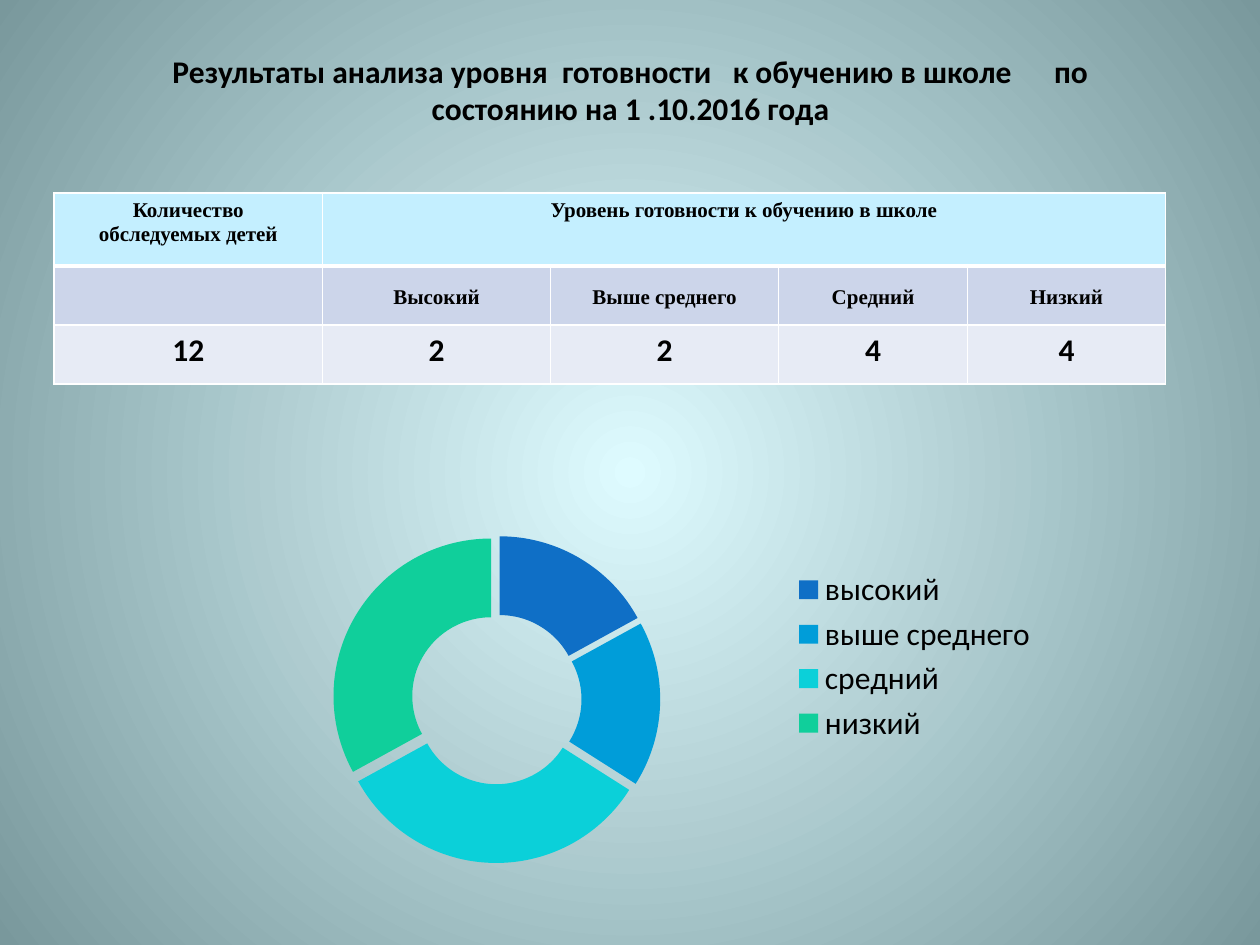
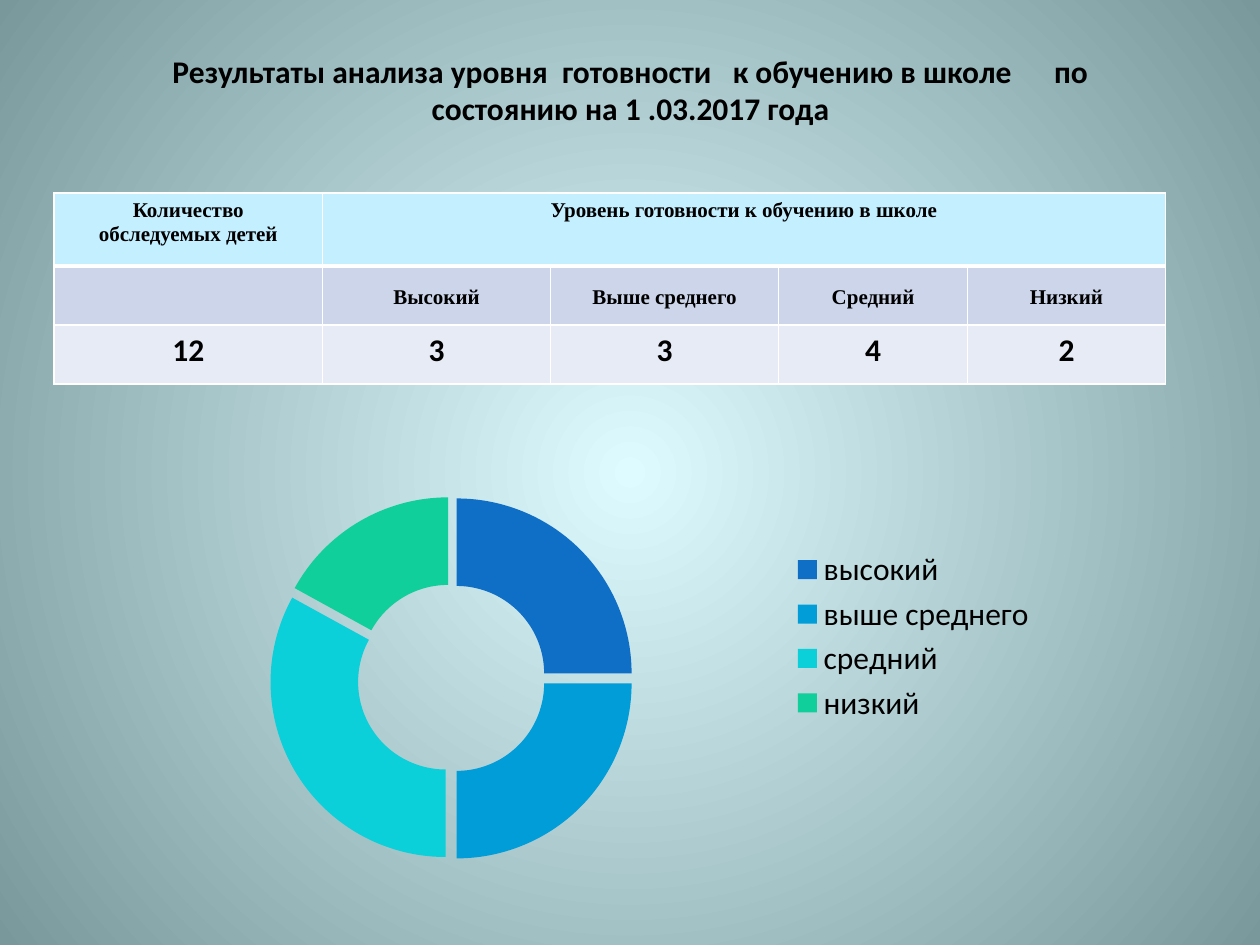
from dataclasses import dataclass

from lxml import etree
from pptx import Presentation
from pptx.chart.data import CategoryChartData
from pptx.dml.color import RGBColor
from pptx.enum.chart import XL_CHART_TYPE, XL_LEGEND_POSITION
from pptx.enum.text import MSO_ANCHOR, PP_ALIGN
from pptx.oxml.ns import qn
from pptx.util import Inches, Pt

CENTER = PP_ALIGN.CENTER
TOP, MIDDLE = MSO_ANCHOR.TOP, MSO_ANCHOR.MIDDLE
DOUGHNUT = XL_CHART_TYPE.DOUGHNUT
LEGEND_RIGHT = XL_LEGEND_POSITION.RIGHT


@dataclass(frozen=True)
class Theme:
    glow: str = "DEFBFF"
    edge: str = "79989C"
    text: str = "000000"
    border: str = "FFFFFF"
    row_fills: tuple = ("C4EFFF", "CCD5EA", "E7EBF5")
    slices: tuple = ("0F6FC6", "009DD9", "0BD0D9", "10CF9B")
    body_font: str = "Calibri"
    header_font: str = "Times New Roman"
    body_size: int = 18
    header_size: int = 12


@dataclass(frozen=True)
class Box:
    left: float
    top: float
    width: float
    height: float

    def lengths(self) -> tuple:
        return tuple(Inches(n) for n in (self.left, self.top, self.width, self.height))


@dataclass(frozen=True)
class Survey:
    date: str
    counts: tuple
    shares: tuple
    chart: Box
    ring: Box


THEME = Theme()
TITLE_BOX = Box(0.83, 0.36, 8.35, 0.71)
TABLE_BOX = Box(0.43, 1.53, 8.82, 1.52)
COLUMN_WIDTHS = (2.13, 1.81, 1.81, 1.5, 1.57)
ROW_HEIGHTS = (0.58, 0.47, 0.47)
LEVELS = ("Высокий", "Выше среднего", "Средний", "Низкий")
EXPLOSION = 8

SURVEYS = (
    Survey("1 .10.2016", (12, 2, 2, 4, 4), (17, 17, 33, 33),
           Box(1.67, 3.44, 6.67, 3.54), Box(2.64, 4.25, 2.6, 2.6)),
    Survey("1 .03.2017", (12, 3, 3, 4, 2), (25, 25, 33, 17),
           Box(0.98, 3.12, 7.35, 3.86), Box(2.14, 3.94, 2.89, 2.89)),
)


def color(value: str) -> RGBColor:
    return RGBColor.from_string(value)


def style_font(font, name: str, size: int, bold: bool = True) -> None:
    font.name, font.size, font.bold = name, Pt(size), bold
    font.color.rgb = color(THEME.text)


def draw_background(slide) -> None:
    """Radial gradient, light in the centre."""
    fill = slide.background.fill
    fill.gradient()
    for stop, value in zip(fill.gradient_stops, (THEME.glow, THEME.edge)):
        stop.color.rgb = color(value)
    gradient = slide.element.find(".//" + qn("a:gradFill"))
    linear = gradient.find(qn("a:lin"))
    if linear is not None:
        gradient.remove(linear)
    circle = etree.SubElement(gradient, qn("a:path"))
    circle.set("path", "circle")
    center = etree.SubElement(circle, qn("a:fillToRect"))
    for side in "ltrb":
        center.set(side, "50000")


def draw_title(slide, date: str) -> None:
    frame = slide.shapes.add_textbox(*TITLE_BOX.lengths()).text_frame
    frame.word_wrap = True
    paragraph = frame.paragraphs[0]
    paragraph.text = ("Результаты анализа уровня  готовности   к обучению в школе      "
                      f"по состоянию на {date} года")
    paragraph.alignment = CENTER
    style_font(paragraph.font, THEME.body_font, THEME.body_size)


def set_borders(cell, row: int) -> None:
    """White rules, with a heavy one under the header row."""
    widths = {"L": 1, "R": 1, "T": 3 if row == 1 else 1, "B": 3 if row == 0 else 1}
    properties = cell._tc.get_or_add_tcPr()
    for side, width in widths.items():
        line = etree.SubElement(properties, qn(f"a:ln{side}"), w=str(Pt(width)))
        fill = etree.SubElement(line, qn("a:solidFill"))
        etree.SubElement(fill, qn("a:srgbClr"), val=THEME.border)


def style_cell(cell, row: int) -> None:
    set_borders(cell, row)
    cell.fill.solid()
    cell.fill.fore_color.rgb = color(THEME.row_fills[row])
    is_level = row == 1
    cell.vertical_anchor = MIDDLE if is_level else TOP
    if is_level:
        cell.margin_left = cell.margin_right = Inches(0.01)
        cell.margin_top = cell.margin_bottom = Inches(0.01)
    is_count = row == 2
    for paragraph in cell.text_frame.paragraphs:
        paragraph.alignment = CENTER
        if is_level:
            paragraph.line_spacing = 1.15
        style_font(paragraph.font,
                   THEME.body_font if is_count else THEME.header_font,
                   THEME.body_size if is_count else THEME.header_size)


def draw_table(slide, counts: tuple) -> None:
    rows = (
        ("Количество\nобследуемых детей", "Уровень готовности к обучению в школе", "", "", ""),
        ("", *LEVELS),
        tuple(str(count) for count in counts),
    )
    table = slide.shapes.add_table(len(rows), len(COLUMN_WIDTHS), *TABLE_BOX.lengths()).table
    table.first_row = table.horz_banding = False
    for column, width in zip(table.columns, COLUMN_WIDTHS):
        column.width = Inches(width)
    for table_row, height in zip(table.rows, ROW_HEIGHTS):
        table_row.height = Inches(height)
    for row, texts in enumerate(rows):
        for column, text in enumerate(texts):
            cell = table.cell(row, column)
            cell.text = text
            style_cell(cell, row)
    table.cell(0, 1).merge(table.cell(0, len(COLUMN_WIDTHS) - 1))


def place_ring(chart, frame: Box, ring: Box) -> None:
    """Fix the plot area as fractions of the chart frame."""
    plot_area = chart.element.find(".//" + qn("c:plotArea"))
    layout = plot_area.find(qn("c:layout"))
    if layout is None:
        layout = etree.Element(qn("c:layout"))
        plot_area.insert(0, layout)
    manual = etree.SubElement(layout, qn("c:manualLayout"))
    values = {
        "layoutTarget": "inner", "xMode": "edge", "yMode": "edge",
        "x": (ring.left - frame.left) / frame.width,
        "y": (ring.top - frame.top) / frame.height,
        "w": ring.width / frame.width,
        "h": ring.height / frame.height,
    }
    for tag, value in values.items():
        etree.SubElement(manual, qn(f"c:{tag}"), val=str(value))


def draw_chart(slide, survey: Survey) -> None:
    data = CategoryChartData()
    data.categories = [level.lower() for level in LEVELS]
    data.add_series("Уровень", survey.shares)
    chart = slide.shapes.add_chart(DOUGHNUT, *survey.chart.lengths(), data).chart
    chart.has_title = False
    style_font(chart.font, THEME.body_font, THEME.body_size, bold=False)
    chart.has_legend = True
    chart.legend.position = LEGEND_RIGHT
    chart.legend.include_in_layout = False
    plot = chart.plots[0]
    plot.vary_by_categories = True
    series = plot.series[0]
    for index, value in enumerate(THEME.slices):
        point_format = series.points[index].format
        point_format.fill.solid()
        point_format.fill.fore_color.rgb = color(value)
        point_format.line.fill.background()
    # Pull the slices apart
    explosion = etree.Element(qn("c:explosion"), val=str(EXPLOSION))
    chart.element.find(".//" + qn("c:ser")).find(qn("c:tx")).addnext(explosion)
    place_ring(chart, survey.chart, survey.ring)


def main() -> None:
    presentation = Presentation()
    presentation.slide_width, presentation.slide_height = Inches(10), Inches(7.5)
    blank = presentation.slide_layouts[6]
    for survey in SURVEYS:
        slide = presentation.slides.add_slide(blank)
        draw_background(slide)
        draw_title(slide, survey.date)
        draw_table(slide, survey.counts)
        draw_chart(slide, survey)
    presentation.save("out.pptx")


if __name__ == "__main__":
    main()
